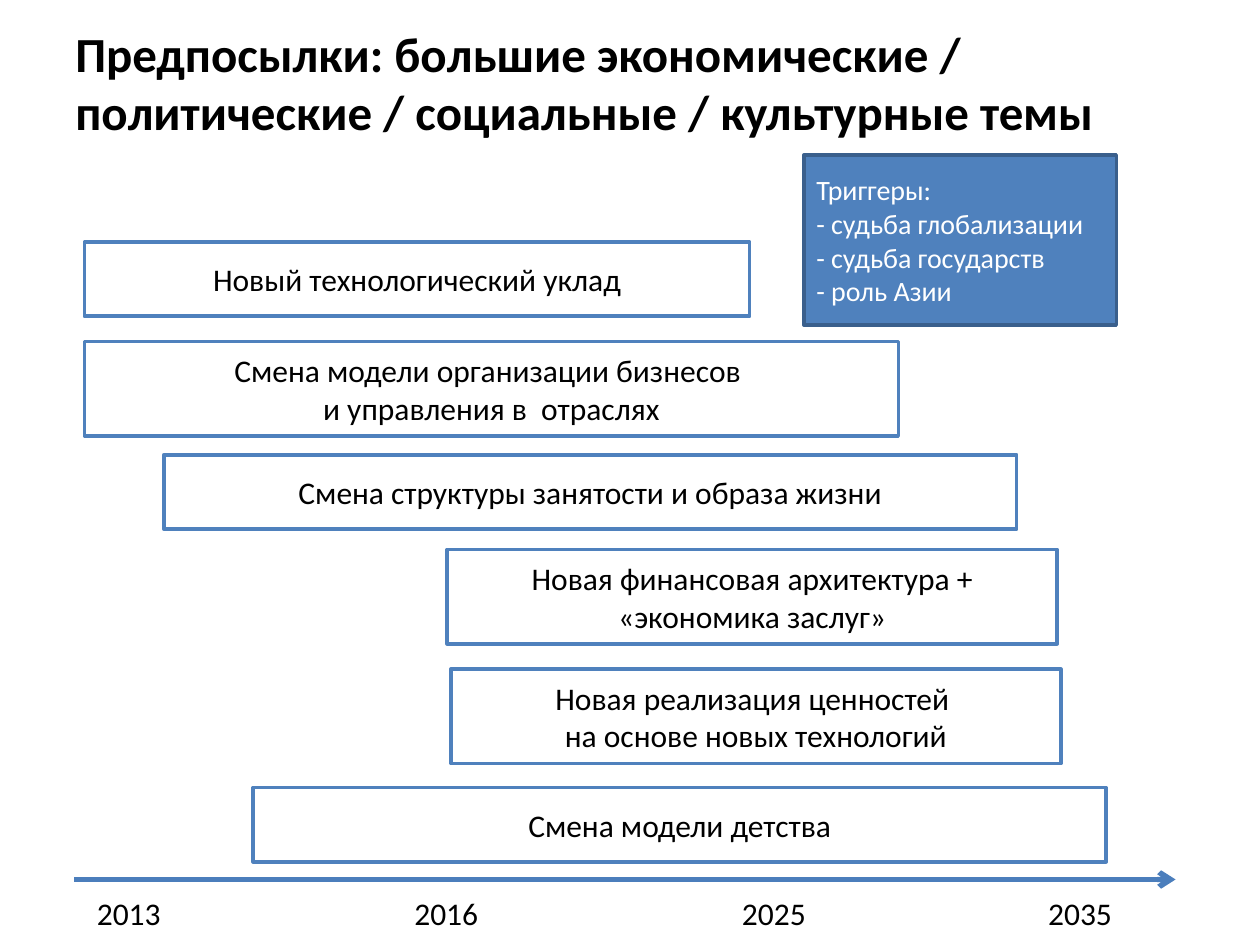
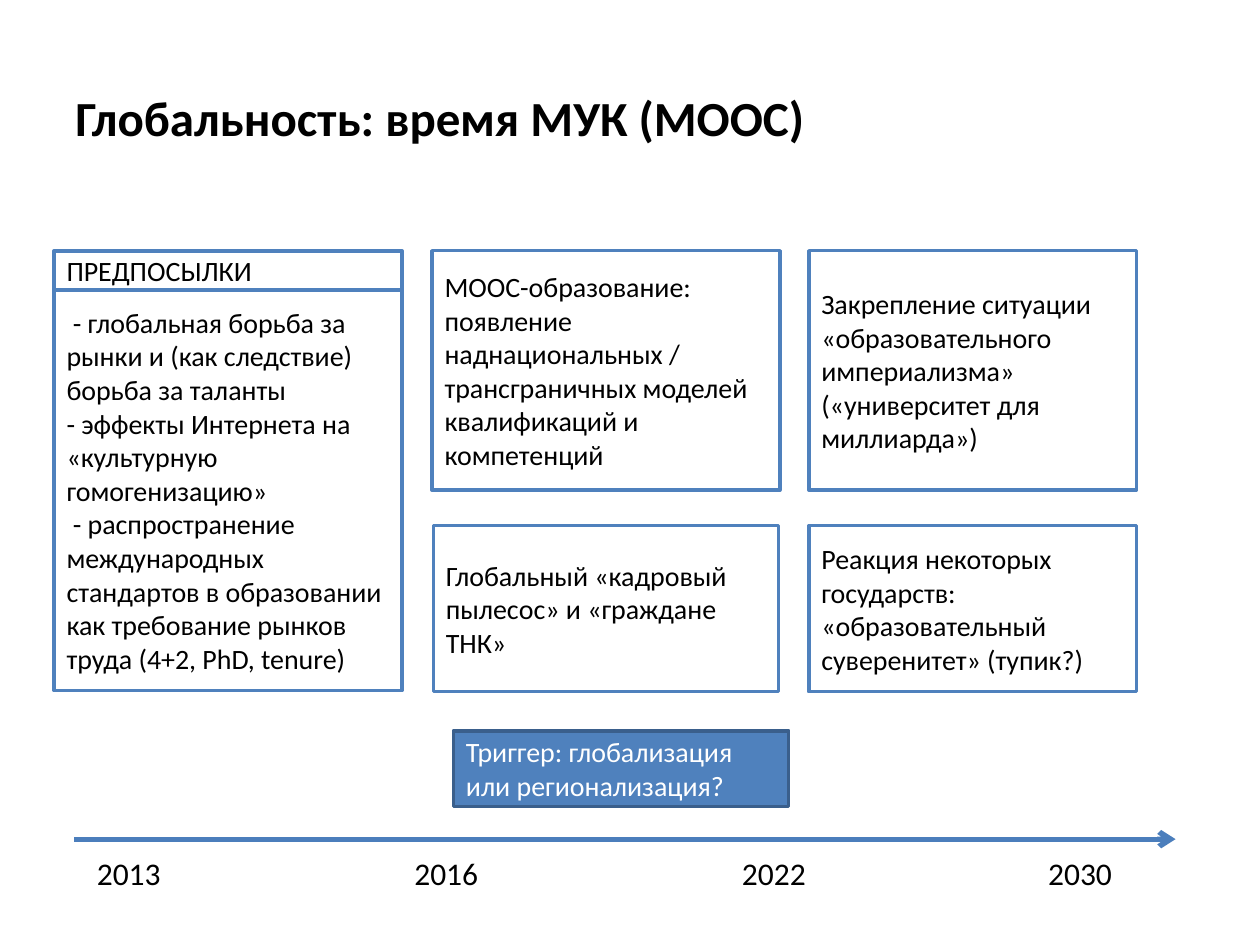
from pptx import Presentation
from pptx import util as u
from pptx.dml.color import RGBColor
from pptx.enum import shapes, text
from pptx.oxml.ns import qn
from lxml import etree

# Shared look
BLACK = RGBColor(0x00, 0x00, 0x00)
WHITE = RGBColor(0xFF, 0xFF, 0xFF)
BLUE = RGBColor(0x4F, 0x81, 0xBD)
DARK_BLUE = RGBColor(0x3A, 0x5F, 0x8C)
ARROW_BLUE = RGBColor(0x4B, 0x7E, 0xBC)
FONT = "Calibri"
LEFT, CENTER = text.PP_ALIGN.LEFT, text.PP_ALIGN.CENTER

deck = Presentation()
deck.slide_width, deck.slide_height = u.Inches(10), u.Inches(7.5)

# Grid of 100 columns and 75 rows
COLUMN = deck.slide_width / 100
ROW = deck.slide_height / 75
YEAR_COLUMNS = (6.7, 31.9, 57.9, 82.2)
AXIS_START, AXIS_END = 5.9, 93.3


def place(left, top, width, height):
    return (round(left * COLUMN), round(top * ROW),
            round(width * COLUMN), round(height * ROW))


def write(box, wording, size, color=BLACK, bold=False, align=LEFT,
          anchor=text.MSO_ANCHOR.MIDDLE, wrap=True):
    frame = box.text_frame
    frame.text = wording
    frame.word_wrap = wrap
    frame.vertical_anchor = anchor
    for para in frame.paragraphs:
        para.alignment = align
        for span in para.runs:
            span.font.name, span.font.size = FONT, u.Pt(size)
            span.font.bold, span.font.color.rgb = bold, color


# Themes: bars on the time axis (left, top, width, height, wording)
theme_bars = [
    (6.7, 19.2, 52.8, 5.9, "Новый технологический уклад"),
    (6.7, 27.1, 64.6, 7.5, "Смена модели организации бизнесов \vи управления в  отраслях"),
    (13, 36.1, 67.7, 5.9, "Смена структуры занятости и образа жизни"),
    (35.5, 43.6, 48.4, 7.5, "Новая финансовая архитектура +\v«экономика заслуг»"),
    (35.8, 53.1, 48.4, 7.5, "Новая реализация ценностей \vна основе новых технологий"),
    (20.1, 62.5, 67.7, 5.9, "Смена модели детства"),
]

# Globality: three columns of cards below a common top
CARD_TOP, LOWER_TOP, HEADER, UPPER, LOWER = 19.9, 41.7, 3.1, 19, 13.2
PREMISE, MODEL, OUTCOME = (4.3, 27.6), (34.3, 27.6), (64.2, 26)
globality_cards = [
    (PREMISE[0], CARD_TOP + HEADER, PREMISE[1], 31.8,
     " - глобальная борьба за рынки и (как следствие) борьба за таланты\n"
     "- эффекты Интернета на «культурную гомогенизацию»\n"
     " - распространение международных стандартов в образовании "
     "как требование рынков труда (4+2, PhD, tenure)"),
    (PREMISE[0], CARD_TOP, PREMISE[1], HEADER, "ПРЕДПОСЫЛКИ"),
    (MODEL[0], CARD_TOP, MODEL[1], UPPER,
     "MOOC-образование: появление наднациональных / трансграничных "
     "моделей квалификаций и компетенций"),
    (MODEL[0] + 0.1, LOWER_TOP, MODEL[1] - 0.2, LOWER,
     "Глобальный «кадровый пылесос» и «граждане ТНК»"),
    (OUTCOME[0], CARD_TOP, OUTCOME[1], UPPER,
     "Закрепление ситуации «образовательного империализма» "
     "(«университет для миллиарда»)"),
    (OUTCOME[0], LOWER_TOP, OUTCOME[1], LOWER,
     "Реакция некоторых государств: «образовательный суверенитет» (тупик?)"),
]

# Title, title place, axis row, years, boxes, box text size and alignment, trigger
slides = [
    ("Предпосылки: большие экономические / \vполитические / социальные / культурные темы",
     (5, 1.3, 83.6, 10.4), 69.8, ("2013", "2016", "2025", "2035"),
     theme_bars, 18, CENTER,
     (63.8, 12.3, 24.8, 13.5,
      "Триггеры:\n- судьба глобализации\n- судьба государств\n- роль Азии")),
    ("Глобальность: время МУК (МOOC)",
     (5, 6.4, 60.5, 5.7), 66.6, ("2013", "2016", "2022", "2030"),
     globality_cards, 16, LEFT,
     (36, 58, 26.6, 6, "Триггер: глобализация или регионализация?")),
]

for title, title_place, axis_row, years, boxes, size, align, trigger in slides:
    page = deck.slides.add_slide(deck.slide_layouts[6])

    # Title
    heading = page.shapes.add_textbox(*place(*title_place))
    write(heading, title, 28, bold=True, wrap=False)

    # Time axis
    start_x, axis_y, length, _ = place(AXIS_START, axis_row, AXIS_END - AXIS_START, 0)
    axis = page.shapes.add_connector(
        shapes.MSO_CONNECTOR.STRAIGHT, start_x, axis_y, start_x + length, axis_y)
    axis.line.color.rgb, axis.line.width = ARROW_BLUE, u.Pt(3)
    etree.SubElement(axis.line._get_or_add_ln(), qn("a:tailEnd"), type="arrow")
    etree.SubElement(axis._element.spPr, qn("a:effectLst"))

    # Years
    for year, left in zip(years, YEAR_COLUMNS):
        label = page.shapes.add_textbox(*place(left, axis_row + 0.7, 7.1, 4))
        write(label, year, 18, anchor=text.MSO_ANCHOR.TOP, wrap=False)

    # White boxes, then the blue trigger
    styled = [(box, WHITE, BLUE, BLACK, size, align) for box in boxes]
    styled.append((trigger, BLUE, DARK_BLUE, WHITE, 16, LEFT))
    for (*area, wording), fill, edge, ink, points, side in styled:
        box = page.shapes.add_shape(shapes.MSO_SHAPE.RECTANGLE, *place(*area))
        box.shadow.inherit = False
        box.fill.solid()
        box.fill.fore_color.rgb = fill
        box.line.color.rgb, box.line.width = edge, u.Pt(2)
        write(box, wording, points, color=ink, align=side)

deck.save("out.pptx")
